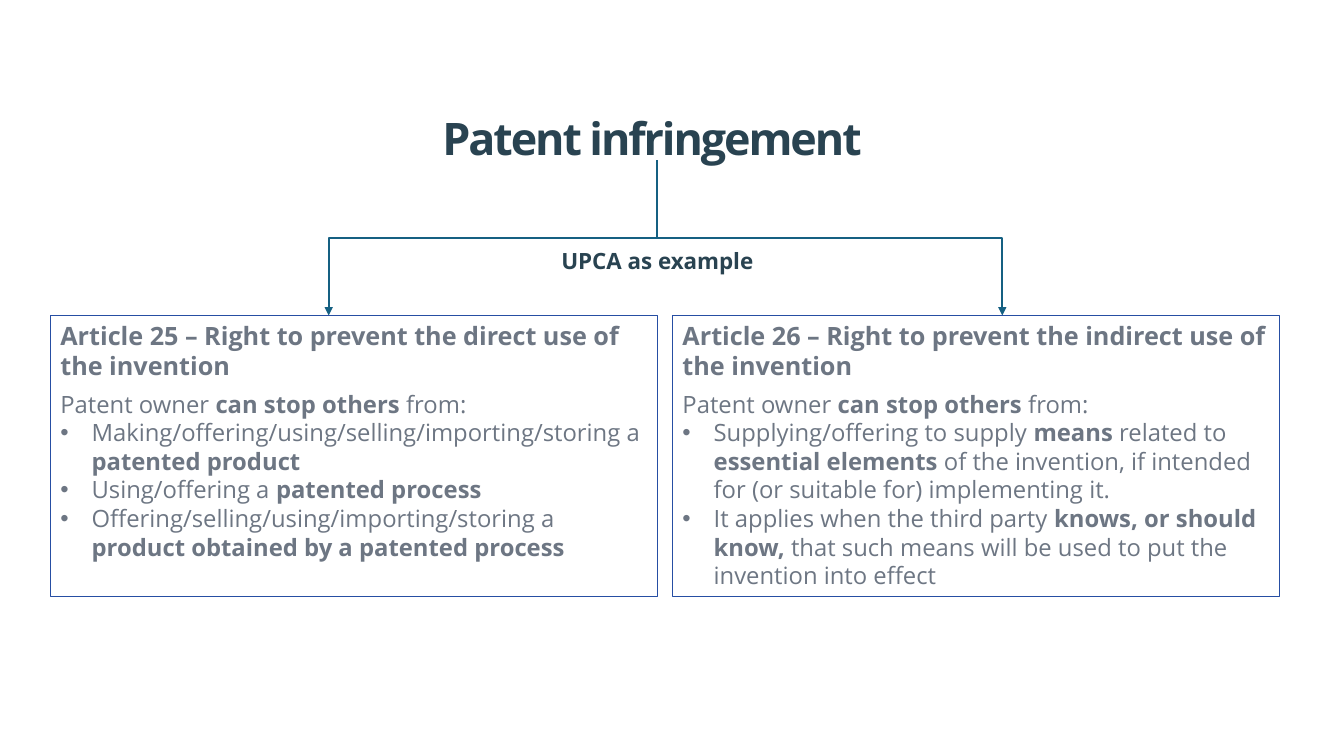
"""Build the slide on direct and indirect patent infringement."""
from dataclasses import dataclass
from typing import Any

from lxml.etree import SubElement
from pptx import Presentation
from pptx.dml.color import RGBColor
from pptx.enum.shapes import MSO_CONNECTOR, MSO_SHAPE
from pptx.enum.text import MSO_ANCHOR, MSO_AUTO_SIZE, PP_ALIGN
from pptx.oxml.ns import qn
from pptx.util import Inches, Pt


@dataclass(frozen=True)
class Theme:
    font: str = "Open Sans"
    heading_color: RGBColor = RGBColor.from_string("294351")
    body_color: RGBColor = RGBColor.from_string("6D7683")
    border_color: RGBColor = RGBColor.from_string("264EA3")
    arrow_color: RGBColor = RGBColor.from_string("156082")
    title_size: int = 32
    article_size: int = 18
    body_size: int = 17
    label_size: int = 16


@dataclass(frozen=True)
class Article:
    heading: str
    bullets: tuple[str, ...]
    side: int
    arrow_x: float


THEME = Theme()
BOLD_MARK = "**"
INTRODUCTION = "Patent owner **can stop others** from:"
BOX_TOP, BOX_WIDTH, BOX_HEIGHT = 3.13, 6.02, 2.79
BOX_LEFT, BOX_PITCH = 0.5, 6.17
BRANCH_X, BRANCH_Y = 6.52, 1.59
BULLET_INDENT = 0.31

ARTICLES = (
    Article(
        "Article 25 – Right to prevent the direct use of the invention",
        (
            "Making/offering/using/selling/importing/storing a **patented product**",
            "Using/offering a **patented process**",
            "Offering/selling/using/importing/storing a "
            "**product obtained by a patented process**",
        ),
        -1,
        3.26,
    ),
    Article(
        "Article 26 – Right to prevent the indirect use of the invention",
        (
            "Supplying/offering to supply **means** related to **essential elements** "
            "of the invention, if intended for (or suitable for) implementing it.",
            "It applies when the third party **knows, or should know,** that such "
            "means will be used to put the invention into effect",
        ),
        1,
        9.94,
    ),
)


def apply_format(target: Any, values: dict[str, Any]) -> None:
    """Set every named attribute on the target."""
    for name, value in values.items():
        setattr(target, name, value)


def add_runs(paragraph: Any, text: str, size: int, color: RGBColor) -> None:
    """Add text to a paragraph, with marked parts in bold."""
    for index, part in enumerate(text.split(BOLD_MARK)):
        if part:
            run = paragraph.add_run()
            run.text = part
            values = {"name": THEME.font, "size": Pt(size), "bold": index % 2 == 1}
            apply_format(run.font, values)
            run.font.color.rgb = color


def add_bullet(paragraph: Any) -> None:
    """Give a paragraph a hanging round bullet."""
    properties = paragraph._p.get_or_add_pPr()
    properties.set("marL", str(Inches(BULLET_INDENT)))
    properties.set("indent", str(-Inches(BULLET_INDENT)))
    SubElement(properties, qn("a:buFont"), typeface="Arial")
    SubElement(properties, qn("a:buChar"), char="•")


def fill_heading(shape: Any, text: str, size: int) -> None:
    """Write one centred bold line in a text shape."""
    frame = shape.text_frame
    values = {"word_wrap": True, "auto_size": MSO_AUTO_SIZE.NONE,
              "vertical_anchor": MSO_ANCHOR.MIDDLE}
    apply_format(frame, values)
    paragraph = frame.paragraphs[0]
    apply_format(paragraph, {"alignment": PP_ALIGN.CENTER, "line_spacing": 0.9})
    add_runs(paragraph, BOLD_MARK + text, size, THEME.heading_color)


def add_title(slide: Any) -> None:
    """Place and format the title placeholder."""
    title = slide.shapes.title
    values = {"left": Inches(0), "top": Inches(1.2),
              "width": Inches(13.03), "height": Inches(0.39)}
    apply_format(title, values)
    fill_heading(title, "Patent infringement ", THEME.title_size)
    title.text_frame.paragraphs[0].runs[0].font._element.set("spc", "-150")


def add_branch(slide: Any, article: Article) -> None:
    """Draw an elbow arrow that leaves the title downwards and ends at an article."""
    drop, span = BOX_TOP - BRANCH_Y, abs(article.arrow_x - BRANCH_X)
    center_x, center_y = (BRANCH_X + article.arrow_x) / 2, BRANCH_Y + drop / 2
    reach = article.side * drop / 2
    connector = slide.shapes.add_connector(
        MSO_CONNECTOR.ELBOW,
        Inches(center_x + reach), Inches(center_y - span / 2),
        Inches(center_x - reach), Inches(center_y + span / 2),
    )
    connector.line.color.rgb = THEME.arrow_color
    connector.line.width = Pt(1.5)
    properties = connector._element.spPr
    rotation = 180 + 90 * article.side
    properties.find(qn("a:xfrm")).set("rot", str(rotation * 60000))
    SubElement(properties.find(qn("a:ln")), qn("a:tailEnd"), type="triangle")
    SubElement(properties, qn("a:effectLst"))


def add_article(slide: Any, article: Article, left: float) -> None:
    """Draw one bordered box with its heading, introduction and bullets."""
    box = slide.shapes.add_shape(
        MSO_SHAPE.RECTANGLE,
        Inches(left), Inches(BOX_TOP), Inches(BOX_WIDTH), Inches(BOX_HEIGHT),
    )
    box.shadow.inherit = False
    box.fill.background()
    box.line.color.rgb = THEME.border_color
    box.line.width = Pt(0.5)
    frame = box.text_frame
    values = {"word_wrap": True, "auto_size": MSO_AUTO_SIZE.SHAPE_TO_FIT_TEXT,
              "vertical_anchor": MSO_ANCHOR.TOP}
    apply_format(frame, values)
    heading = frame.paragraphs[0]
    heading.alignment = PP_ALIGN.LEFT
    add_runs(heading, BOLD_MARK + article.heading, THEME.article_size, THEME.body_color)
    introduction = frame.add_paragraph()
    apply_format(introduction, {"alignment": PP_ALIGN.LEFT, "space_before": Pt(6)})
    add_runs(introduction, INTRODUCTION, THEME.body_size, THEME.body_color)
    for text in article.bullets:
        paragraph = frame.add_paragraph()
        add_bullet(paragraph)
        paragraph.alignment = PP_ALIGN.LEFT
        add_runs(paragraph, text, THEME.body_size, THEME.body_color)


def main() -> None:
    """Build and save the presentation."""
    presentation = Presentation()
    presentation.slide_width = Inches(13.33)
    presentation.slide_height = Inches(7.5)
    slide = presentation.slides.add_slide(presentation.slide_layouts[5])
    add_title(slide)
    for article in ARTICLES:
        add_branch(slide, article)
    for index, article in enumerate(ARTICLES):
        add_article(slide, article, BOX_LEFT + index * BOX_PITCH)
    label = slide.shapes.add_textbox(
        Inches(3.06), Inches(2.41), Inches(6.92), Inches(0.39)
    )
    fill_heading(label, "UPCA as example", THEME.label_size)
    presentation.save("out.pptx")


if __name__ == "__main__":
    main()
